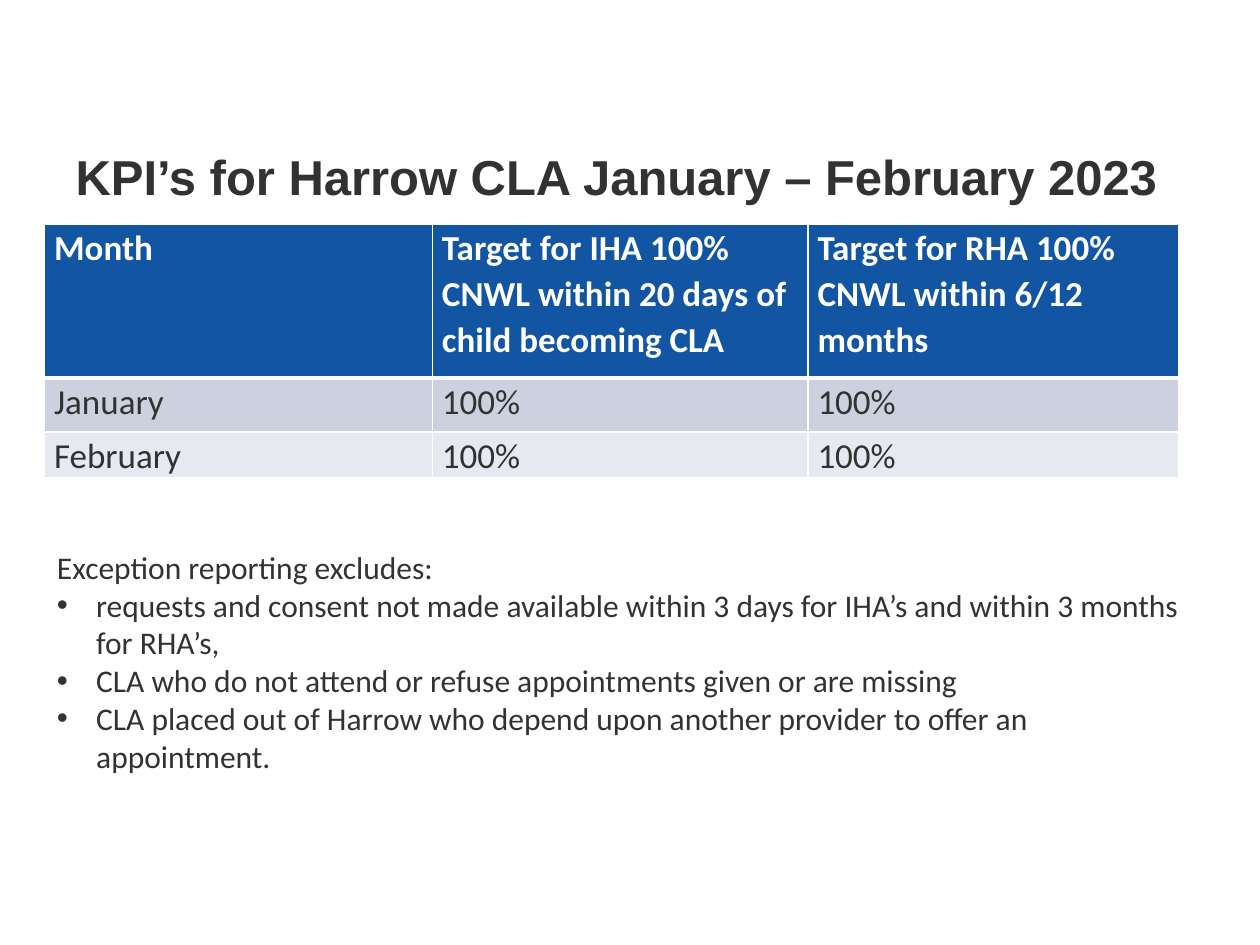
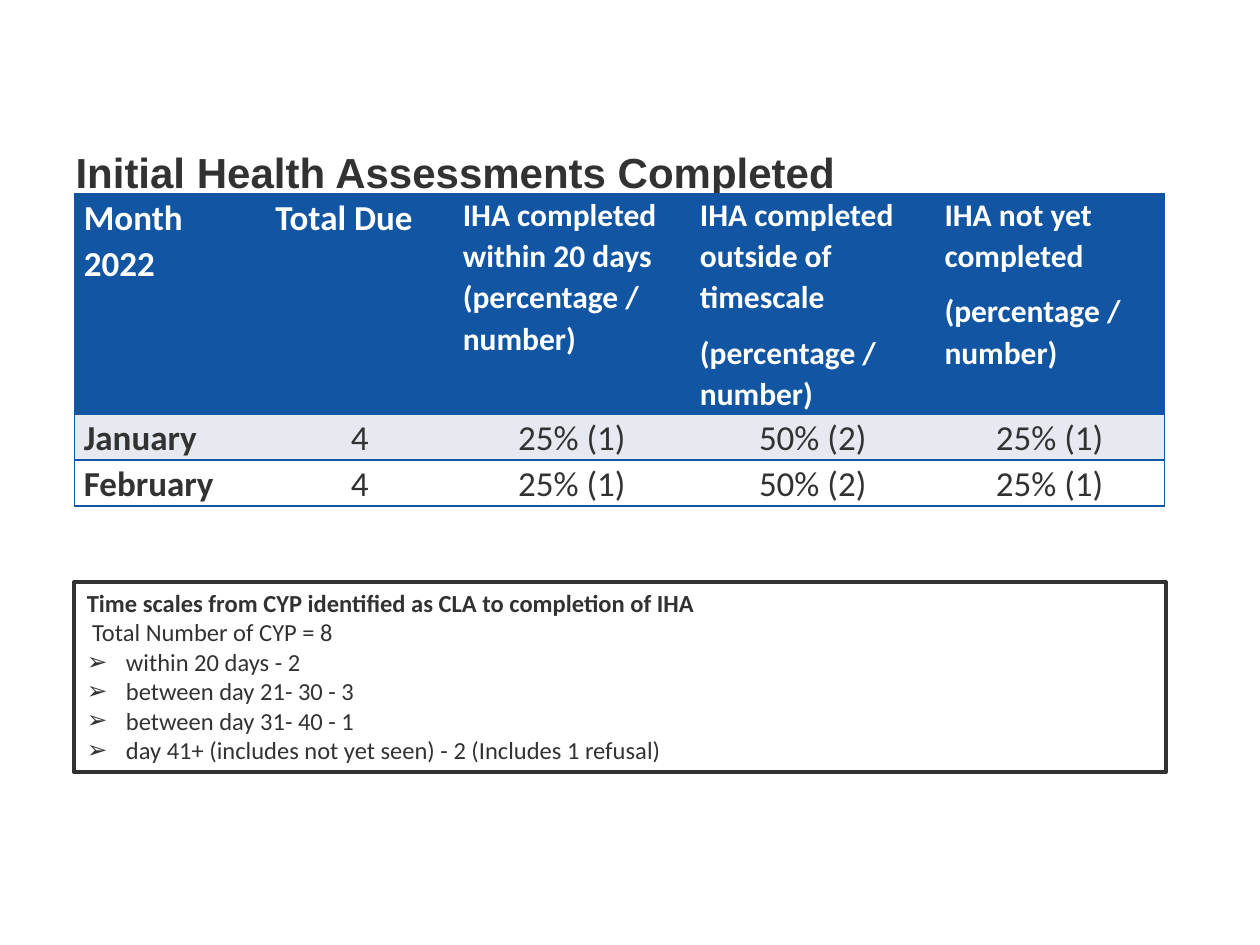
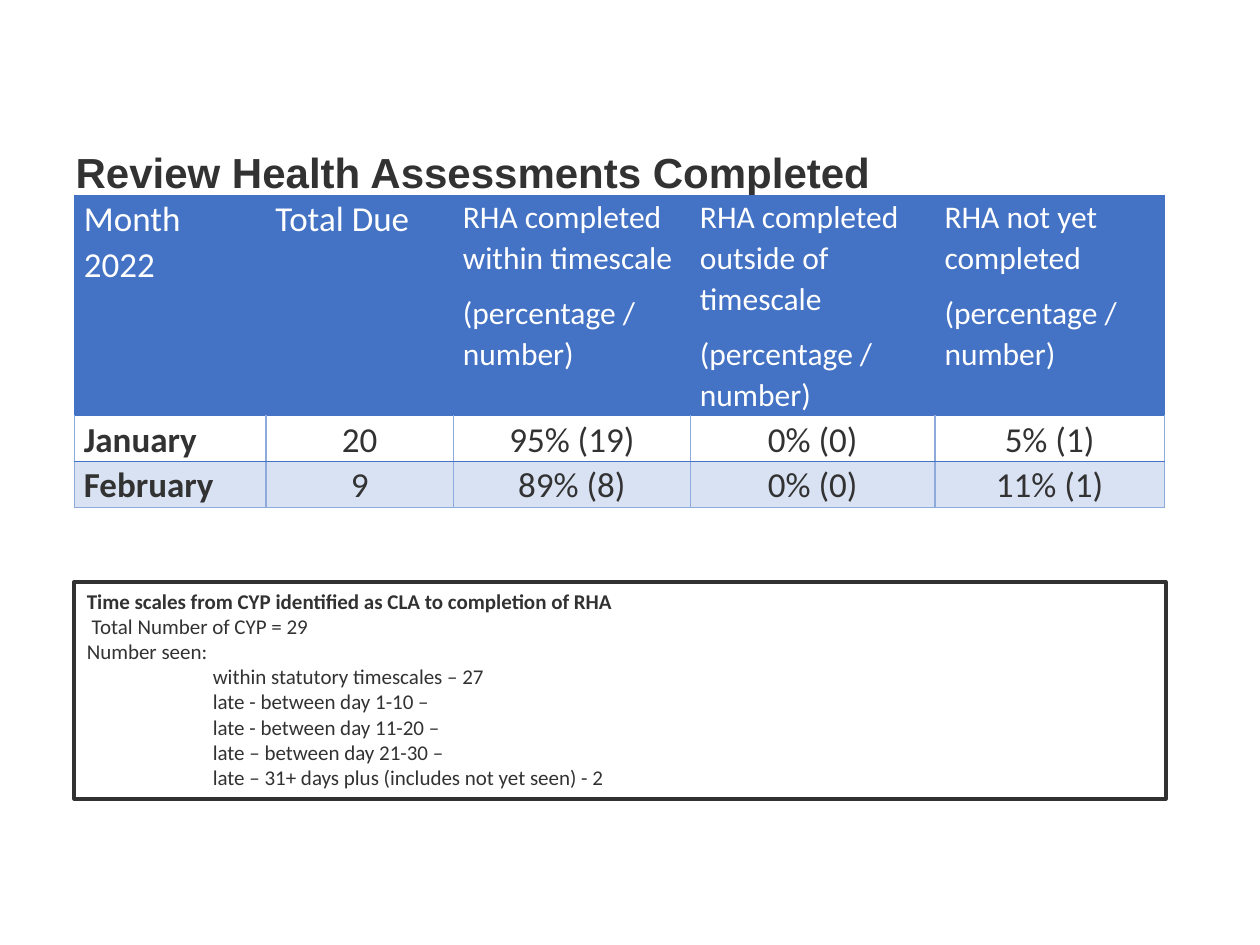
from dataclasses import dataclass
from typing import NamedTuple

from lxml import etree
from pptx import Presentation
from pptx.dml.color import RGBColor
from pptx.enum.shapes import MSO_SHAPE
from pptx.enum.text import MSO_ANCHOR, MSO_AUTO_SIZE, PP_ALIGN
from pptx.oxml.ns import qn
from pptx.util import Cm, Pt

RECTANGLE = MSO_SHAPE.RECTANGLE
TOP = MSO_ANCHOR.TOP
NO_FIT = MSO_AUTO_SIZE.NONE
LEFT, CENTER = PP_ALIGN.LEFT, PP_ALIGN.CENTER

INK, WHITE = "323232", "FFFFFF"
NAVY, LILAC, MIST = "1155A3", "CCD1E0", "E7E9F0"
BLUE, SKY, PALE = "4472C4", "8EAADB", "D9E2F3"
TITLE_FONT, BODY_FONT = "Arial", "Calibri"
TITLE_ONLY = 5
HANGING = 0.79


class Frame(NamedTuple):
    left: float
    top: float
    width: float
    height: float

    def lengths(self) -> list:
        return [Cm(value) for value in self]


class Edge(NamedTuple):
    colour: str
    width: float = 1


@dataclass
class Line:
    text: str
    bold: bool = False
    bullet: str = ""
    indent: float = 0


@dataclass
class RowStyle:
    fill: str
    top: Edge
    bottom: Edge
    outer: Edge
    inner: Edge | None = None


@dataclass
class Grid:
    left: float
    top: float
    columns: list[float]
    heights: list[float]
    styles: list[RowStyle]
    rows: list[list[str]]
    header_sizes: list[int]
    header_bold: bool = True
    month_bold: bool = True
    value_align: PP_ALIGN = CENTER
    space_after: float = 8


def rgb(colour: str) -> RGBColor:
    return RGBColor.from_string(colour)


def write(para, text: str, *, size: float, colour: str = INK, bold: bool = False,
          font: str = BODY_FONT, align: PP_ALIGN = LEFT) -> None:
    para.alignment = align
    span = para.add_run()
    span.text = text
    span.font.name = font
    span.font.size = Pt(size)
    span.font.bold = bold
    span.font.color.rgb = rgb(colour)


def indent_line(para, line: Line) -> None:
    properties = para._p.get_or_add_pPr()
    properties.set("marL", str(Cm(line.indent)))
    properties.set("indent", str(-Cm(line.indent) if line.bullet else 0))
    if line.bullet:
        etree.SubElement(properties, qn("a:buFont"), typeface=TITLE_FONT)
        etree.SubElement(properties, qn("a:buChar"), char=line.bullet)


def write_lines(box, lines: list[Line], size: float) -> None:
    text_frame = box.text_frame
    text_frame.word_wrap = True
    text_frame.vertical_anchor = TOP
    for index, line in enumerate(lines):
        para = text_frame.add_paragraph() if index else text_frame.paragraphs[0]
        indent_line(para, line)
        write(para, line.text, size=size, bold=line.bold)


def add_page(deck, title: str, size: float, height: float):
    page = deck.slides.add_slide(deck.slide_layouts[TITLE_ONLY])
    box = page.shapes.title
    box.left, box.top, box.width, box.height = Frame(1.27, 2.72, 22.86, height).lengths()
    text_frame = box.text_frame
    text_frame.word_wrap = True
    text_frame.auto_size = NO_FIT
    text_frame.vertical_anchor = TOP
    text_frame.margin_top = Cm(0.23)
    write(text_frame.paragraphs[0], title, size=size, bold=True, font=TITLE_FONT)
    return page


def set_borders(cell, edges: dict[str, Edge | None]) -> None:
    properties = cell._tc.get_or_add_tcPr()
    for index, (side, edge) in enumerate(edges.items()):
        border = etree.Element(qn(f"a:ln{side}"))
        if edge:
            border.set("w", str(Pt(edge.width)))
            fill = etree.SubElement(border, qn("a:solidFill"))
            etree.SubElement(fill, qn("a:srgbClr"), val=edge.colour)
        else:
            etree.SubElement(border, qn("a:noFill"))
        properties.insert(index, border)


def write_cell(cell, grid: Grid, row: int, column: int) -> None:
    header = row == 0
    cell.margin_left = cell.margin_right = Cm(0.19)
    cell.margin_top = cell.margin_bottom = 0
    cell.vertical_anchor = TOP
    for index, text in enumerate(grid.rows[row][column].split("\n")):
        para = cell.text_frame.add_paragraph() if index else cell.text_frame.paragraphs[0]
        para.line_spacing = 1.07
        para.space_after = Pt(grid.space_after)
        write(para, text,
              size=grid.header_sizes[column] if header else 20,
              colour=WHITE if header else INK,
              bold=grid.header_bold if header else grid.month_bold and column == 0,
              align=LEFT if header or column == 0 else grid.value_align)

    style = grid.styles[row]
    last = len(grid.columns) - 1
    cell.fill.solid()
    cell.fill.fore_color.rgb = rgb(style.fill)
    set_borders(cell, {
        "L": style.outer if column == 0 else style.inner,
        "R": style.outer if column == last else style.inner,
        "T": style.top,
        "B": style.bottom,
    })


def add_grid(page, grid: Grid) -> None:
    frame = Frame(grid.left, grid.top, sum(grid.columns), sum(grid.heights))
    table = page.shapes.add_table(len(grid.rows), len(grid.columns), *frame.lengths()).table
    for column, width in zip(table.columns, grid.columns):
        column.width = Cm(width)
    for row, height in zip(table.rows, grid.heights):
        row.height = Cm(height)
    for row in range(len(grid.rows)):
        for column in range(len(grid.columns)):
            write_cell(table.cell(row, column), grid, row, column)


def add_assessment_grid(page, top: float, styles: list[RowStyle], rows: list[list[str]],
                        header_bold: bool) -> None:
    add_grid(page, Grid(1.5, top, [3.86, 3.78, 4.78, 4.93, 4.62], [4.44, 0.92, 0.92],
                        styles, rows, [20, 20, 18, 18, 18], header_bold))


def add_timescales(page, height: float, lines: list[Line], size: float) -> None:
    box = page.shapes.add_shape(RECTANGLE, *Frame(1.5, 11.73, 22, height).lengths())
    box.shadow.inherit = False
    box.fill.background()
    box.line.color.rgb = rgb(INK)
    box.line.width = Pt(2.25)
    write_lines(box, lines, size)


def build_targets(deck) -> None:
    page = add_page(deck, "KPI’s for Harrow CLA January – February 2023", 28, 1.8)
    thin, thick = Edge(WHITE), Edge(WHITE, 3)
    styles = [
        RowStyle(NAVY, thin, thick, thin, thin),
        RowStyle(LILAC, thick, thin, thin, thin),
        RowStyle(MIST, thin, thin, thin, thin),
    ]
    rows = [
        ["Month",
         "Target for IHA 100%\nCNWL within 20 days of child becoming CLA",
         "Target for RHA 100%\nCNWL within 6/12 months"],
        ["January", "100%", "100%"],
        ["February", "100%", "100%"],
    ]
    add_grid(page, Grid(0.9, 4.52, [7.82, 7.57, 7.47], [3.1, 1.09, 0.92], styles, rows,
                        [20, 20, 20], month_bold=False, value_align=LEFT, space_after=0))
    exclusions = [
        "requests and consent not made available within 3 days for IHA’s and within 3 months "
        "for RHA’s,",
        "CLA who do not attend or refuse appointments given or are missing",
        "CLA placed out of Harrow who depend upon another provider to offer an appointment.",
    ]
    box = page.shapes.add_textbox(*Frame(0.9, 10.92, 23.42, 5.64).lengths())
    lines = [Line(text, bullet="•", indent=HANGING) for text in exclusions]
    write_lines(box, [Line("Exception reporting excludes:"), *lines], 18)


def build_initial(deck) -> None:
    page = add_page(deck, "Initial Health Assessments Completed", 24, 3.4)
    edge = Edge(NAVY)
    styles = [RowStyle(fill, edge, edge, edge) for fill in (NAVY, MIST, WHITE)]
    rows = [
        ["Month 2022", "Total Due",
         "IHA completed within 20 days (percentage / number)",
         "IHA completed outside of timescale\n(percentage / number)",
         "IHA not yet completed\n(percentage / number)"],
        ["January", "4", "25% (1)", "50% (2)", "25% (1)"],
        ["February", "4", "25% (1)", "50% (2)", "25% (1)"],
    ]
    add_assessment_grid(page, 3.91, styles, rows, header_bold=True)
    counts = [
        "within 20 days - 2",
        "between day 21- 30 - 3",
        "between day 31- 40 - 1",
        "day 41+ (includes not yet seen) - 2 (Includes 1 refusal)",
    ]
    add_timescales(page, 3.84, [
        Line("Time scales from CYP identified as CLA to completion of IHA", bold=True),
        Line("Total Number of CYP = 8", indent=0.11),
        *[Line(text, bullet="➢", indent=HANGING) for text in counts],
    ], 14)


def build_review(deck) -> None:
    page = add_page(deck, "Review Health Assessments Completed", 24, 3.4)
    strong, light = Edge(BLUE), Edge(SKY)
    styles = [
        RowStyle(BLUE, strong, strong, strong),
        RowStyle(WHITE, strong, strong, light, light),
        RowStyle(PALE, strong, light, light, light),
    ]
    rows = [
        ["Month 2022", "Total Due",
         "RHA completed within timescale\n(percentage / number)",
         "RHA completed outside of timescale\n(percentage / number)",
         "RHA not yet completed\n(percentage / number)"],
        ["January", "20", "95% (19)", "0% (0)", "5% (1)"],
        ["February", "9", "89% (8)", "0% (0)", "11% (1)"],
    ]
    add_assessment_grid(page, 3.94, styles, rows, header_bold=False)
    counts = [
        "within statutory timescales – 27",
        "late - between day 1-10 –",
        "late - between day 11-20 –",
        "late – between day 21-30 –",
        "late – 31+ days plus (includes not yet seen) - 2",
    ]
    add_timescales(page, 4.37, [
        Line("Time scales from CYP identified as CLA to completion of RHA", bold=True),
        Line("Total Number of CYP = 29", indent=0.1),
        Line("Number seen:"),
        *[Line(text, indent=2.54) for text in counts],
    ], 12)


def main() -> None:
    deck = Presentation()
    deck.slide_width, deck.slide_height = Cm(25.4), Cm(19.05)
    build_targets(deck)
    build_initial(deck)
    build_review(deck)
    deck.save("out.pptx")


if __name__ == "__main__":
    main()
